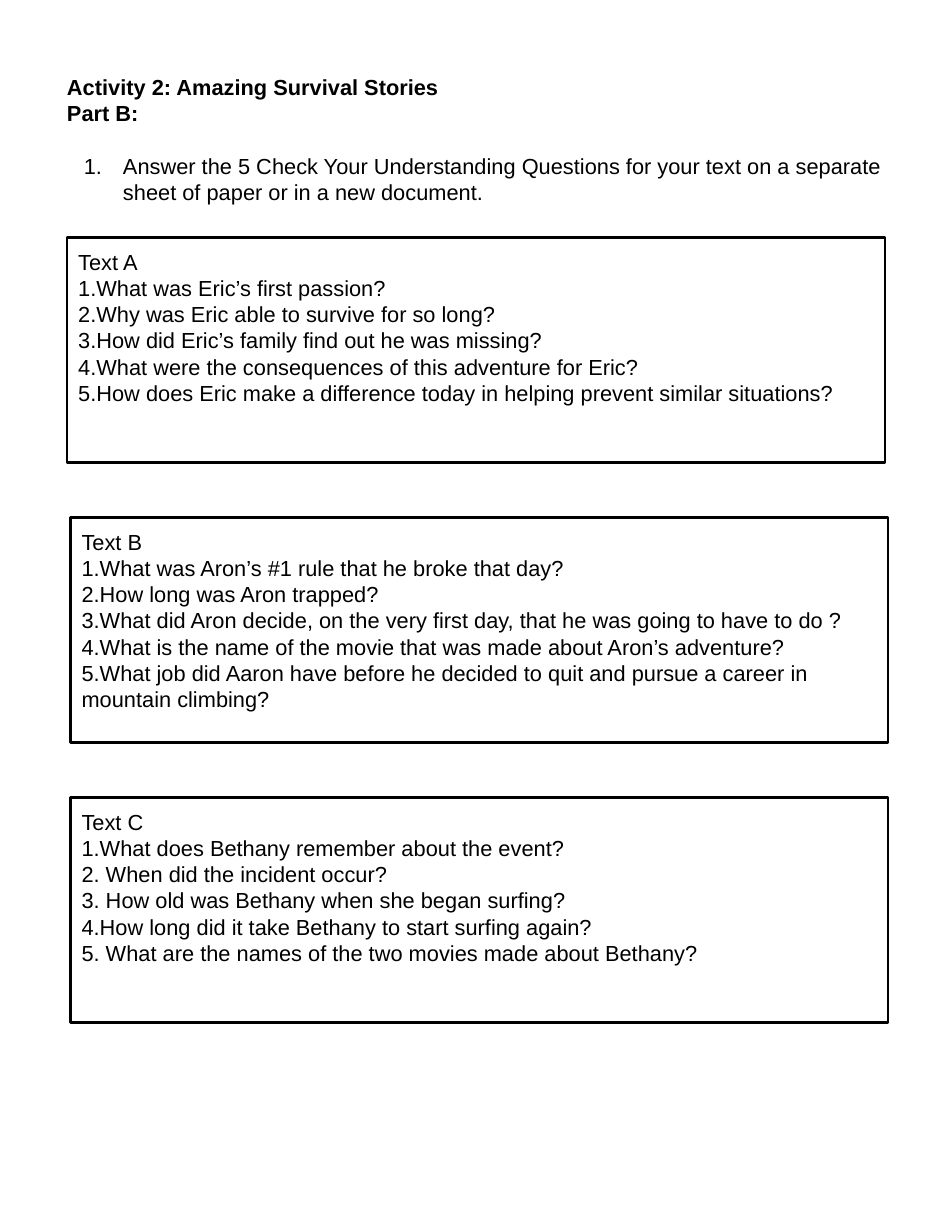
from dataclasses import dataclass

from lxml import etree
from pptx import Presentation
from pptx import util as u
from pptx.dml.color import RGBColor
from pptx.enum import shapes, text
from pptx.oxml import ns

COLOURS = {"ink": "000000", "paper": "FFFFFF"}
FONT = "Arial"
PAGE_WIDTH, PAGE_HEIGHT = u.Inches(8.5), u.Inches(11)
MARGIN = u.Inches(0.1)
BOX_TOP, BOX_PITCH = 2.12, 2.5
BOX_WIDTH, BOX_HEIGHT = 7.3, 2.01


@dataclass(frozen=True)
class QuestionBox:
    row: int
    left: float
    lines: tuple[str, ...]


HEADING = ("Activity 2: Amazing Survival Stories", "Part B:")
TASK = (
    "Answer the 5 Check Your Understanding Questions for your text "
    "on a separate sheet of paper or in a new document."
)
QUESTION_BOXES = (
    QuestionBox(0, 0.6, (
        "Text A",
        "1.What was Eric’s first passion?",
        "2.Why was Eric able to survive for so long?",
        "3.How did Eric’s family find out he was missing?",
        "4.What were the consequences of this adventure for Eric?",
        "5.How does Eric make a difference today in helping prevent similar situations?",
    )),
    QuestionBox(1, 0.63, (
        "Text B",
        "1.What was Aron’s #1 rule that he broke that day?",
        "2.How long was Aron trapped?",
        "3.What did Aron decide, on the very first day, that he was going to have to do ?",
        "4.What is the name of the movie that was made about Aron’s adventure?",
        "5.What job did Aaron have before he decided to quit and pursue a career "
        "in mountain climbing?",
    )),
    QuestionBox(2, 0.63, (
        "Text C",
        "1.What does Bethany remember about the event?",
        "2. When did the incident occur?",
        "3. How old was Bethany when she began surfing?",
        "4.How long did it take Bethany to start surfing again?",
        "5. What are the names of the two movies made about Bethany?",
    )),
)


def colour(name: str) -> RGBColor:
    return RGBColor.from_string(COLOURS[name])


def prepare_frame(box):
    frame = box.text_frame
    frame.word_wrap = True
    frame.vertical_anchor = text.MSO_ANCHOR.TOP
    frame.margin_left = frame.margin_right = MARGIN
    frame.margin_top = frame.margin_bottom = MARGIN
    return frame


def write_line(frame, content: str, *, first: bool = False, bold: bool = False,
               size: float = 14, before: float = 0):
    para = frame.paragraphs[0] if first else frame.add_paragraph()
    para.alignment = text.PP_ALIGN.LEFT
    para.line_spacing = 1.0
    para.space_before = u.Pt(before)
    span = para.add_run()
    span.text = content
    span.font.name = FONT
    span.font.size = u.Pt(size)
    span.font.bold = bold
    span.font.color.rgb = colour("ink")
    return para


def number_line(para, *, indent: float, hanging: float) -> None:
    props = para._p.get_or_add_pPr()
    props.set("marL", str(u.Inches(indent)))
    props.set("indent", str(-u.Inches(hanging)))
    bullet_colour = etree.SubElement(props, ns.qn("a:buClr"))
    etree.SubElement(bullet_colour, ns.qn("a:srgbClr")).set("val", COLOURS["ink"])
    etree.SubElement(props, ns.qn("a:buFont")).set("typeface", FONT)
    etree.SubElement(props, ns.qn("a:buAutoNum")).set("type", "arabicPeriod")


def draw_instructions(page) -> None:
    box = page.shapes.add_textbox(
        u.Inches(0.5), u.Inches(0.56), u.Inches(7.57), u.Inches(1.31))
    frame = prepare_frame(box)
    for index, line in enumerate(HEADING):
        write_line(frame, line, first=index == 0, bold=True)
    task = write_line(frame, TASK, before=16.8)
    number_line(task, indent=0.5, hanging=0.35)


def draw_question_box(page, item: QuestionBox) -> None:
    box = page.shapes.add_shape(
        shapes.MSO_SHAPE.RECTANGLE,
        u.Inches(item.left), u.Inches(BOX_TOP + item.row * BOX_PITCH),
        u.Inches(BOX_WIDTH), u.Inches(BOX_HEIGHT))
    box.shadow.inherit = False
    box.fill.background()
    box.line.color.rgb = colour("ink")
    box.line.width = u.Pt(1.5)
    frame = prepare_frame(box)
    for index, line in enumerate(item.lines):
        write_line(frame, line, first=index == 0)


def main() -> None:
    deck = Presentation()
    deck.slide_width, deck.slide_height = PAGE_WIDTH, PAGE_HEIGHT
    page = deck.slides.add_slide(deck.slide_layouts[6])
    page.background.fill.solid()
    page.background.fill.fore_color.rgb = colour("paper")
    draw_instructions(page)
    for item in QUESTION_BOXES:
        draw_question_box(page, item)


    deck.save("out.pptx")


if __name__ == "__main__":
    main()
